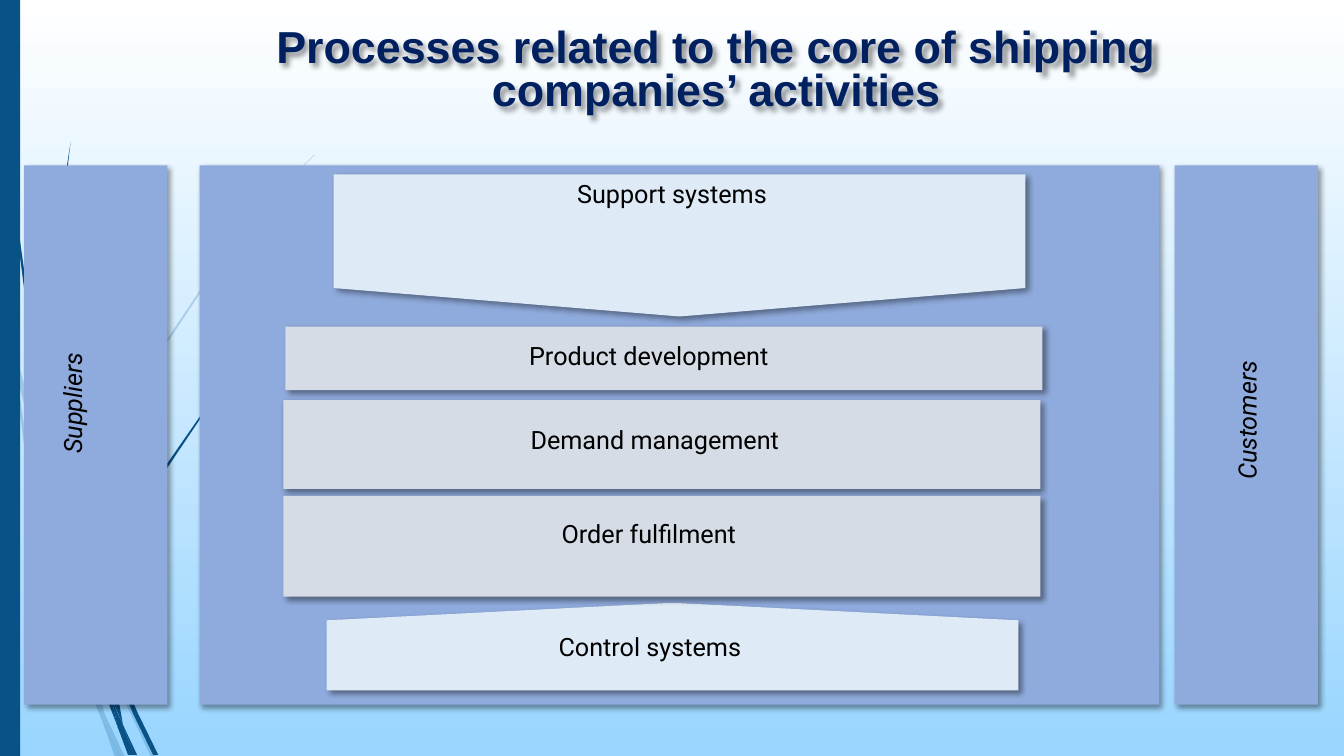
"""Builds the slide on the core processes of shipping companies."""
from lxml import etree
from pptx import Presentation
from pptx.dml.color import RGBColor
from pptx.enum.shapes import MSO_SHAPE
from pptx.enum.text import MSO_ANCHOR, MSO_AUTO_SIZE, PP_ALIGN
from pptx.oxml.ns import qn
from pptx.util import Inches, Pt

RECT = MSO_SHAPE.RECTANGLE
TAB = MSO_SHAPE.FLOWCHART_OFFPAGE_CONNECTOR
CENTER = PP_ALIGN.CENTER
MIDDLE = MSO_ANCHOR.MIDDLE
GROW = MSO_AUTO_SIZE.SHAPE_TO_FIT_TEXT

THEME = {
    "top": "FFFFFF", "base": "99D5FF", "strand": "085286", "title": "002060",
    "panel": "8FAADC", "system": "DEEBF7", "process": "D6DCE5", "text": "000000",
    "head": ("Arial", 32), "body": ("Roboto", 18),
    "shade": {"blur": 4, "dist": 3, "angle": 45, "alpha": 40},
}

TITLE = "Processes related to the core of shipping companies’ activities"
PANEL_Y, PANEL_H = 1.64, 5.35
PANELS = [(0.24, 1.42), (11.65, 1.42), (1.98, 9.52)]
SYSTEMS = [(3.31, 1.73, 1.41, 0), (3.24, 5.98, 0.87, 180)]
SYSTEM_W = 6.86
STEPS = [(2.83, 3.24, 0.63), (2.81, 3.97, 0.88), (2.81, 4.92, 1)]
STEP_W = 7.51
LABEL_W, SIDE_W, LABEL_H = 5.39, 3.69, 0.4
LABELS = [
    ("Support systems", 3.97, 1.72),
    ("Product development", 3.74, 3.33),
    ("Demand management", 3.8, 4.16),
    ("Order fulfilment", 3.74, 5.09),
    ("Control systems", 3.75, 6.21),
]
SIDES = [("Suppliers", -1.13, 3.8), ("Customers", 10.52, 3.97)]

PALE = [
    [(0.11, 3.5), (0.09, 3.22), (0, 2.82), (0, 2.99), (0.1, 3.44)],
    [(0.58, 5.22), (0.84, 5.99), (0.85, 5.86), (0.62, 5.2), (0.14, 3.45), (0.17, 3.76)],
    [(0.92, 6.07), (0.88, 5.96), (0.88, 6.1), (1.23, 6.94), (1.5, 7.51), (1.55, 7.51),
     (1.27, 6.92)],
    [(1.19, 7.51), (1.24, 7.51), (1.05, 7.11)],
    [(0.93, 6.83), (0.7, 6.19), (0.31, 4.69), (0.17, 3.76), (0.11, 3.5), (0.28, 4.7),
     (0.65, 6.21), (0.92, 6.93), (1.01, 7.14), (0.99, 7.07)],
    [(0.84, 5.99), (0.87, 6.46), (0.93, 6.83), (0.96, 6.92), (1.05, 7.11), (1.03, 7.06),
     (0.91, 6.46), (0.88, 6.1)],
    [(0.88, 5.84), (1.1, 4.62), (1.6, 3.49), (2.29, 2.45), (2.68, 1.98), (3.12, 1.54),
     (3.12, 1.53), (2.68, 1.97), (2.28, 2.44), (1.58, 3.48), (1.07, 4.61), (0.85, 5.84),
     (0.88, 5.96)],
    [(1.01, 7.14), (1.14, 7.51), (1.19, 7.51)],
    [(0.96, 6.92), (0.93, 6.83), (0.99, 7.07), (1.01, 7.14), (1.19, 7.51), (1.05, 7.11)],
]
DARK = [
    [(0.07, 1.1), (0.17, 2.33), (0.33, 3.55), (0.57, 4.81), (0.55, 4.53), (0.36, 3.55),
     (0.19, 2.32), (0.08, 1.09), (0.04, 0), (0.03, 0)],
    [(1.13, 6.49), (1.1, 6.41), (1.11, 6.56), (1.32, 7.08), (1.52, 7.49), (1.57, 7.49),
     (1.36, 7.06)],
    [(1.1, 6.91), (0.98, 6.57), (0.72, 5.56), (0.57, 4.77), (0.68, 5.57), (0.93, 6.59),
     (1.17, 7.22)],
    [(0.6, 4.72), (0.58, 4.53), (0.54, 3.49), (0.58, 2.45), (0.7, 1.41), (0.62, 1.93),
     (0.56, 2.45), (0.52, 3.49), (0.55, 4.49)],
    [(1.33, 7.49), (1.36, 7.49), (1.22, 7.19)],
    [(1.11, 6.33), (1.25, 5.52), (1.58, 4.76), (2.05, 4.06), (2.31, 3.74), (2.61, 3.44),
     (2.6, 3.44), (2.31, 3.73), (2.04, 4.05), (1.56, 4.74), (1.22, 5.51), (1.06, 6.31),
     (1.1, 6.41)],
    [(1.17, 7.22), (1.27, 7.49), (1.31, 7.49)],
    [(1.06, 6.45), (1.1, 6.91), (1.22, 7.19), (1.11, 6.56)],
    [(1.16, 7.06), (1.1, 6.91), (1.17, 7.22), (1.3, 7.49), (1.33, 7.49), (1.22, 7.19)],
]


def paint(shape, color):
    shape.fill.solid()
    shape.fill.fore_color.rgb = RGBColor.from_string(THEME[color])
    shape.line.fill.background()
    shape.shadow.inherit = False


def shade(shape):
    tone = THEME["shade"]
    shape.shadow.inherit = False
    drop = etree.SubElement(
        shape.element.spPr.find(qn("a:effectLst")), qn("a:outerShdw"),
        blurRad=str(Pt(tone["blur"])), dist=str(Pt(tone["dist"])),
        dir=str(tone["angle"] * 60000), algn="tl", rotWithShape="0")
    ink = etree.SubElement(drop, qn("a:srgbClr"), val=THEME["text"])
    etree.SubElement(ink, qn("a:alpha"), val=str(tone["alpha"] * 1000))


def block(slide, kind, box, color, turn=0):
    shape = slide.shapes.add_shape(kind, *map(Inches, box))
    paint(shape, color)
    shape.rotation = turn
    return shape


def strand(slide, knots, alpha):
    dots = [(Inches(x), Inches(y)) for x, y in knots]
    pen = slide.shapes.build_freeform(*dots[0])
    pen.add_line_segments(dots[1:], close=True)
    shape = pen.convert_to_shape()
    paint(shape, "strand")
    if alpha < 100:
        ink = shape.element.spPr.find(qn("a:solidFill"))[0]
        etree.SubElement(ink, qn("a:alpha"), val=str(alpha * 1000))


def label(slide, words, box, face="body", color="text", turn=0):
    shape = slide.shapes.add_textbox(*map(Inches, box))
    shape.rotation = turn
    shape.text_frame.word_wrap = True
    line = shape.text_frame.paragraphs[0]
    line.alignment = CENTER
    run = line.add_run()
    run.text = words
    name, size = THEME[face]
    run.font.name, run.font.size = name, Pt(size)
    run.font.color.rgb = RGBColor.from_string(THEME[color])
    return shape, line, run


def main():
    deck = Presentation()
    deck.slide_width, deck.slide_height = Inches(13.33), Inches(7.5)
    slide = deck.slides.add_slide(deck.slide_layouts[6])
    back = slide.background.fill
    back.gradient()
    back.gradient_angle = 270
    for stop, color in zip(back.gradient_stops, ("top", "base")):
        stop.color.rgb = RGBColor.from_string(THEME[color])
    for group, alpha in ((PALE, 20), (DARK, 100)):
        for knots in group:
            strand(slide, knots, alpha)
    block(slide, RECT, (0, 0, 0.2, 7.5), "strand")
    shape, line, run = label(slide, TITLE, (1.63, 0.21, 10.95, 1.02), "head", "title")
    shape.text_frame.vertical_anchor = MIDDLE
    line.line_spacing = 0.8
    run.font.bold = True
    shade(shape)
    for x, w in PANELS:
        shade(block(slide, RECT, (x, PANEL_Y, w, PANEL_H), "panel"))
    for x, y, h, turn in SYSTEMS:
        shade(block(slide, TAB, (x, y, SYSTEM_W, h), "system", turn))
    for x, y, h in STEPS:
        shade(block(slide, RECT, (x, y, STEP_W, h), "process"))
    for group, w, turn in ((LABELS, LABEL_W, 0), (SIDES, SIDE_W, 270)):
        for words, x, y in group:
            shape, line, run = label(slide, words, (x, y, w, LABEL_H), turn=turn)
            shape.text_frame.auto_size = GROW
            if turn:
                run.font.italic = True
    deck.save("out.pptx")


if __name__ == "__main__":
    main()
